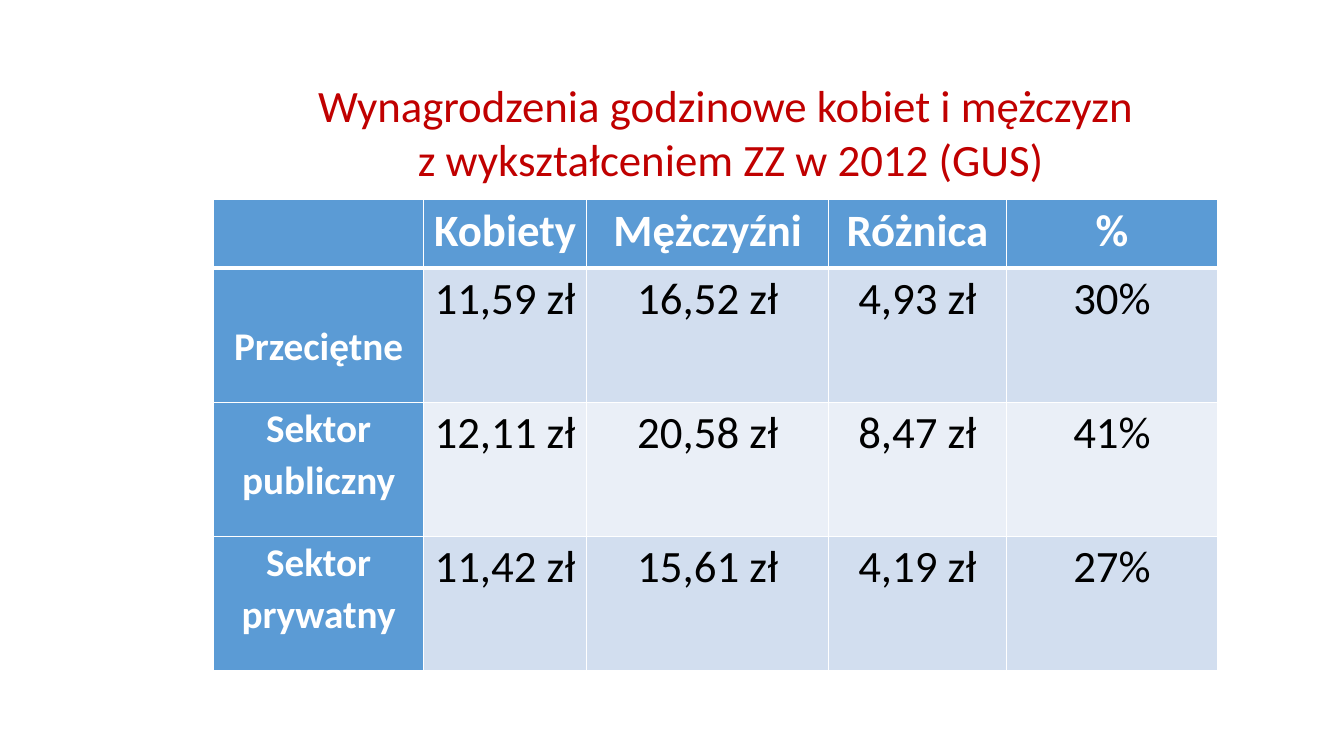
from dataclasses import dataclass

from lxml import etree
from pptx import Presentation, util as u
from pptx.dml.color import RGBColor
from pptx.enum import text
from pptx.oxml.ns import qn


@dataclass(frozen=True)
class Theme:
    font: str = "Calibri"
    title: str = "C00000"
    head: str = "5B9BD5"
    bands: tuple = ("D2DEEF", "EAEFF7")
    white: str = "FFFFFF"
    ink: str = "000000"
    large: int = 32
    label: int = 28
    thin: int = 1
    thick: int = 3


THEME = Theme()

TITLE = ("Wynagrodzenia godzinowe kobiet i mężczyzn ",
         "z wykształceniem ZZ w 2012 (GUS)")
COLUMNS = (2.08, 1.62, 2.4, 1.76, 2.0 + 0.1)
ROWS = (0.68, 1.33, 1.33, 1.33)
WAGES = (
    ("", "Kobiety", "Mężczyźni", "Różnica", "%"),
    ("Przeciętne", "11,59 zł", "16,52 zł", "4,93 zł", "30%"),
    ("Sektor publiczny", "12,11 zł", "20,58 zł", "8,47 zł", "41%"),
    ("Sektor prywatny", "11,42 zł", "15,61 zł", "4,19 zł", "27%"),
)


def set_all(obj, values):
    for name, value in values.items():
        setattr(obj, name, value)


def style_font(font, size, color, bold):
    set_all(font, {"name": THEME.font, "size": u.Pt(size), "bold": bold})
    font.color.rgb = RGBColor.from_string(color)


def add_title(s, left, top, width, height):
    sp = s.shapes.add_textbox(*map(u.Inches, (left, top, width, height)))
    tf = sp.text_frame
    set_all(tf, {"word_wrap": True, "margin_top": u.Inches(0.49),
                 "margin_bottom": 0, "vertical_anchor": text.MSO_ANCHOR.TOP})
    p = tf.paragraphs[0]
    p.alignment = text.PP_ALIGN.CENTER
    for i, line in enumerate(TITLE):
        if i:
            p.add_line_break()
        r = p.add_run()
        r.text = line
        style_font(r.font, THEME.large, THEME.title, False)


def add_borders(cell, row):
    """Draw white rules, with a thicker one below the header row."""
    widths = {"L": THEME.thin, "R": THEME.thin,
              "T": THEME.thick if row == 1 else THEME.thin,
              "B": THEME.thick if row == 0 else THEME.thin}
    tc_pr = cell._tc.get_or_add_tcPr()
    for side, width in widths.items():
        ln = etree.SubElement(tc_pr, qn(f"a:ln{side}"), w=str(u.Pt(width)))
        fill = etree.SubElement(ln, qn("a:solidFill"))
        etree.SubElement(fill, qn("a:srgbClr"), val=THEME.white)


def fill_cell(cell, row, col, wording):
    is_head = row == 0 or col == 0
    add_borders(cell, row)
    color = THEME.head if is_head else THEME.bands[(row - 1) % 2]
    cell.fill.solid()
    cell.fill.fore_color.rgb = RGBColor.from_string(color)
    # The one-line row label sits on the second line of its cell.
    top = 0.51 if (row, col) == (1, 0) else 0
    set_all(cell, {"margin_left": u.Inches(0.07), "margin_right": u.Inches(0.07),
                   "margin_top": u.Inches(top), "margin_bottom": 0})
    if not wording:
        return
    p = cell.text_frame.paragraphs[0]
    set_all(p, {"alignment": text.PP_ALIGN.CENTER, "line_spacing": 1.07})
    r = p.add_run()
    r.text = wording
    style_font(r.font, THEME.large if col else THEME.label,
               THEME.white if is_head else THEME.ink, is_head)


def add_wage_table(s, left, top, width, height):
    box = map(u.Inches, (left, top, width, height))
    table = s.shapes.add_table(len(ROWS), len(COLUMNS), *box).table
    for column, size in zip(table.columns, COLUMNS):
        column.width = u.Inches(size)
    for row, size in zip(table.rows, ROWS):
        row.height = u.Inches(size)
    for i, words in enumerate(WAGES):
        for j, wording in enumerate(words):
            fill_cell(table.cell(i, j), i, j, wording)


def main():
    prs = Presentation()
    set_all(prs, {"slide_width": u.Inches(13.33), "slide_height": u.Inches(7.5)})
    s = prs.slides.add_slide(prs.slide_layouts[6])
    add_title(s, 1.5, 0.28, 11.5, 1.45)
    add_wage_table(s, 2.12, 1.98, sum(COLUMNS), sum(ROWS))
    prs.save("out.pptx")


if __name__ == "__main__":
    main()
